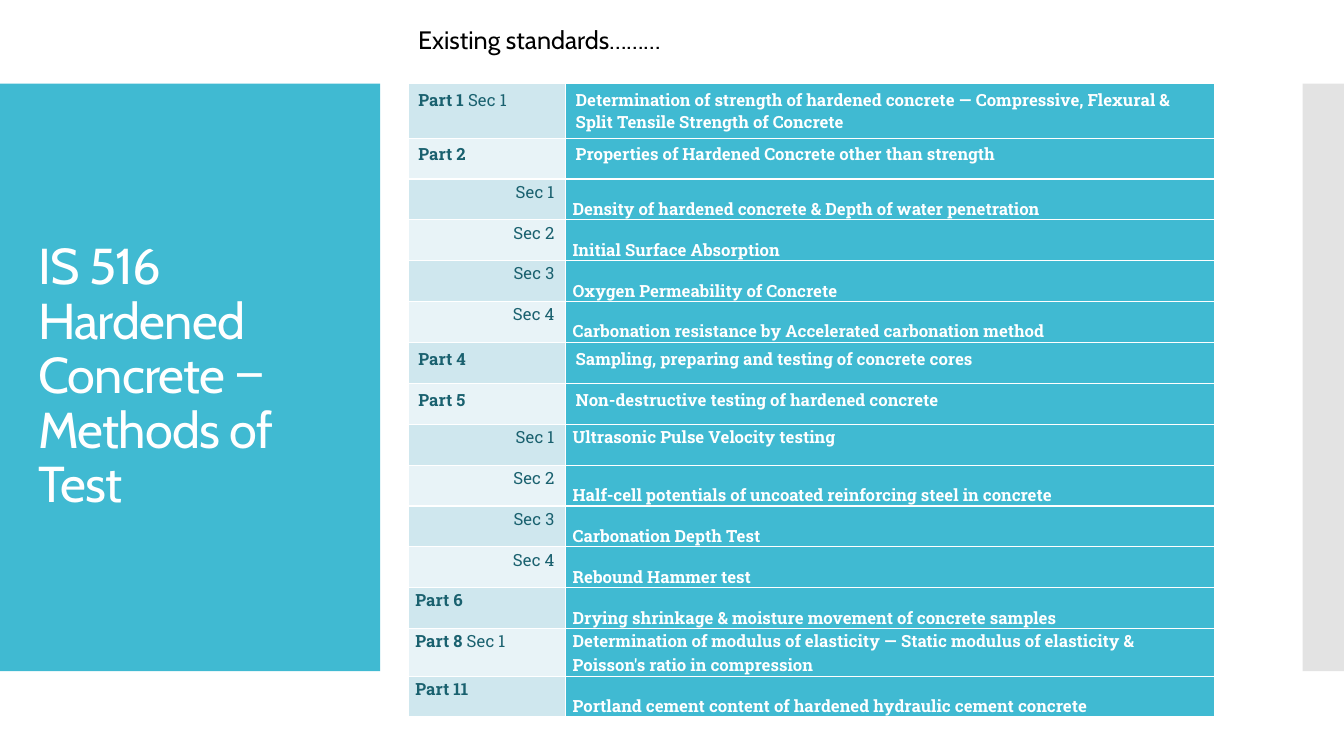
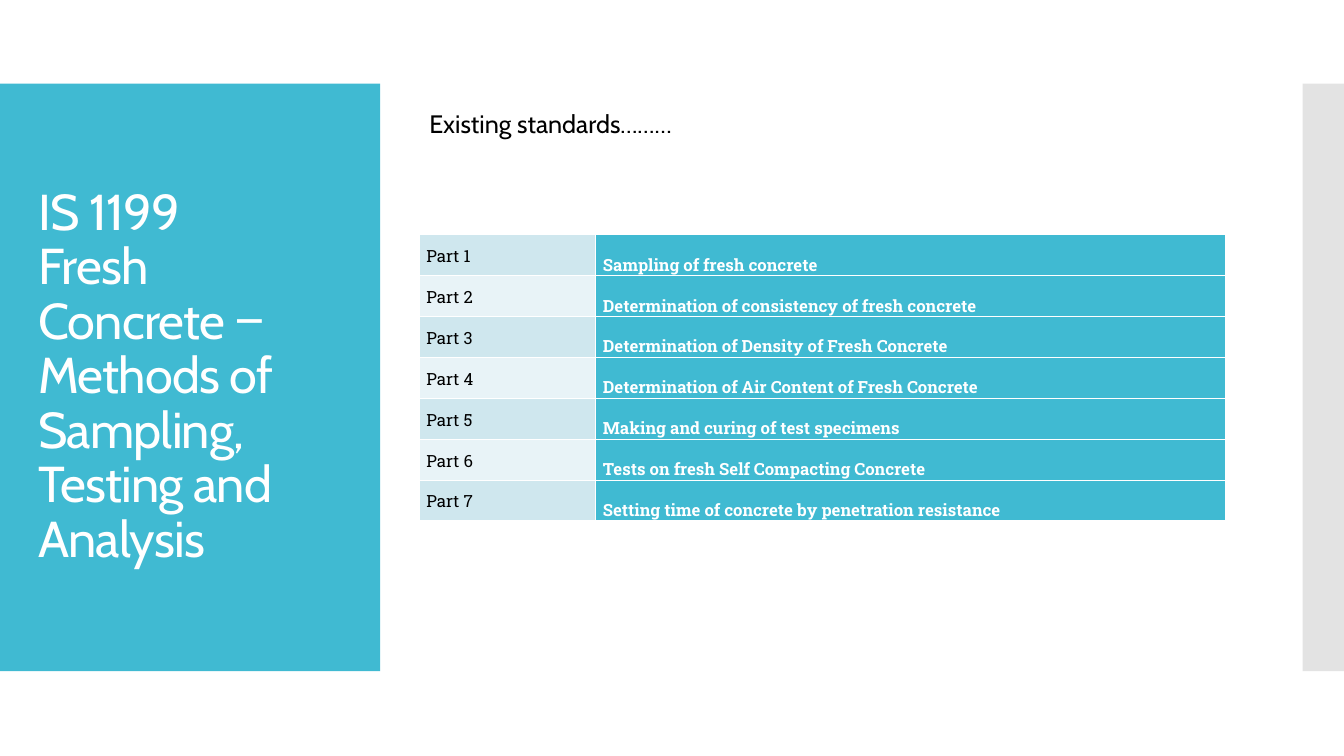
from dataclasses import dataclass

from lxml import etree
from pptx import Presentation
from pptx.dml.color import RGBColor
from pptx.enum.shapes import MSO_SHAPE
from pptx.enum.text import MSO_ANCHOR, MSO_AUTO_SIZE, PP_ALIGN
from pptx.oxml.ns import qn
from pptx.slide import Slide, SlideLayout
from pptx.table import _Cell
from pptx.text.text import _Run
from pptx.util import Inches, Pt


@dataclass(frozen=True)
class Theme:
    heading_font: str = "Cabin"
    body_font: str = "Roboto Slab"
    title_size: int = 36
    caption_size: int = 18
    table_size: int = 12
    teal: str = "40BAD2"
    dark_teal: str = "1A616F"
    label_fills: tuple[str, str] = ("CFE7EE", "E8F3F7")
    grey: str = "C8C8C8"
    white: str = "FFFFFF"
    black: str = "000000"


THEME = Theme()
TABLE_WIDTH = 8
ROW_HEIGHT = 2.84 / 7


@dataclass(frozen=True)
class Band:
    left: float
    width: float
    color: str
    opacity: int = 100


@dataclass(frozen=True)
class Standard:
    """A table row; the heading is bold, the section regular, roomy keeps default margins."""
    heading: str
    section: str
    description: str
    roomy: bool = False
    anchor: MSO_ANCHOR = MSO_ANCHOR.BOTTOM


@dataclass(frozen=True)
class StandardsPage:
    title: str
    left: float
    caption_top: float
    table_top: float
    label_width: float
    label_color: str
    label_anchor: MSO_ANCHOR
    section_align: PP_ALIGN
    standards: tuple[Standard, ...]


BANDS = (
    Band(0, 3.77, THEME.teal),
    Band(12.92, 0.42, THEME.grey, opacity=50),
)

HARDENED = StandardsPage(
    "IS 516 Hardened Concrete ‒ Methods of Test",
    left=4.05, caption_top=0.19, table_top=0.83, label_width=1.56,
    label_color=THEME.dark_teal, label_anchor=MSO_ANCHOR.TOP,
    section_align=PP_ALIGN.RIGHT,
    standards=(
        Standard("Part 1 ", "Sec 1", "Determination of strength of hardened concrete ― "
                 "Compressive, Flexural & Split Tensile Strength of Concrete", roomy=True),
        Standard("Part 2", "", "Properties of Hardened Concrete other than strength", roomy=True),
        Standard("", "Sec 1 ", "Density of hardened concrete & Depth of water penetration"),
        Standard("", "Sec 2 ", "Initial Surface Absorption"),
        Standard("", "Sec 3 ", "Oxygen Permeability of Concrete"),
        Standard("", "Sec 4 ", "Carbonation resistance by Accelerated carbonation method"),
        Standard("Part 4", "", "Sampling, preparing and testing of concrete cores", roomy=True),
        Standard("Part 5", "", "Non-destructive testing of hardened concrete", roomy=True),
        Standard("", "Sec 1 ", "Ultrasonic Pulse Velocity testing", anchor=MSO_ANCHOR.TOP),
        Standard("", "Sec 2 ", "Half-cell potentials of uncoated reinforcing steel in concrete"),
        Standard("", "Sec 3 ", "Carbonation Depth Test"),
        Standard("", "Sec 4 ", "Rebound Hammer test"),
        Standard("Part 6", "", "Drying shrinkage & moisture movement of concrete samples"),
        Standard("Part 8 ", "Sec 1", "Determination of modulus of elasticity ― "
                 "Static modulus of elasticity & Poisson's ratio in compression"),
        Standard("Part 11", "", "Portland cement content of hardened hydraulic cement concrete"),
    ),
)

FRESH_TOPICS = (
    "Sampling of fresh concrete",
    "Determination of consistency of fresh concrete",
    "Determination of Density of Fresh Concrete",
    "Determination of Air Content of Fresh Concrete",
    "Making and curing of test specimens",
    "Tests on fresh Self Compacting Concrete",
    "Setting time of concrete by penetration resistance",
)

FRESH = StandardsPage(
    "IS 1199\vFresh Concrete ‒ Methods of Sampling, Testing and Analysis",
    left=4.16, caption_top=1.03, table_top=2.33, label_width=1.75,
    label_color=THEME.black, label_anchor=MSO_ANCHOR.MIDDLE,
    section_align=PP_ALIGN.LEFT,
    standards=tuple(Standard("", f"Part {number}", topic)
                    for number, topic in enumerate(FRESH_TOPICS, start=1)),
)


def style_run(r: _Run, font: str, size: int, color: str, bold: bool = False) -> None:
    r.font.name = font
    r.font.size = Pt(size)
    r.font.bold = bold
    r.font.color.rgb = RGBColor.from_string(color)


def add_bands(layout: SlideLayout, s: Slide) -> None:
    """Draw the side bands and move them to the layout, behind its placeholders."""
    for band in BANDS:
        sp = s.shapes.add_shape(MSO_SHAPE.RECTANGLE, Inches(band.left), Inches(0.83),
                                Inches(band.width), Inches(5.83))
        sp.shadow.inherit = False
        sp.line.fill.background()
        sp.fill.solid()
        sp.fill.fore_color.rgb = RGBColor.from_string(band.color)
        if band.opacity < 100:
            color = sp.element.spPr.find(f".//{qn('a:srgbClr')}")
            etree.SubElement(color, qn("a:alpha")).set("val", str(band.opacity * 1000))
        layout.shapes.element.insert(2, sp.element)


def set_title(s: Slide, text: str) -> None:
    title = s.shapes.title
    title.left, title.top = Inches(0.28), Inches(1.23)
    title.width, title.height = Inches(3.22), Inches(5.03)
    tf = title.text_frame
    tf.text = text
    tf.word_wrap = True
    tf.auto_size = MSO_AUTO_SIZE.NONE
    tf.vertical_anchor = MSO_ANCHOR.MIDDLE
    p = tf.paragraphs[0]
    p.alignment = PP_ALIGN.LEFT
    p.line_spacing = 0.9
    for r in p.runs:
        style_run(r, THEME.heading_font, THEME.title_size, THEME.white)
        r._r.get_or_add_rPr().set("spc", "-60")


def add_caption(s: Slide, page: StandardsPage) -> None:
    box = s.shapes.add_textbox(Inches(page.left), Inches(page.caption_top),
                               Inches(TABLE_WIDTH), Inches(0.4))
    tf = box.text_frame
    tf.word_wrap = True
    tf.auto_size = MSO_AUTO_SIZE.SHAPE_TO_FIT_TEXT
    tf.text = "Existing standards………"
    style_run(tf.paragraphs[0].runs[0], THEME.heading_font, THEME.caption_size, THEME.black)


def add_borders(cell: _Cell) -> None:
    tc_pr = cell._tc.get_or_add_tcPr()
    for i, side in enumerate(("lnL", "lnR", "lnT", "lnB")):
        ln = etree.Element(qn(f"a:{side}"), w=str(Pt(1)))
        fill = etree.SubElement(ln, qn("a:solidFill"))
        etree.SubElement(fill, qn("a:srgbClr"), val=THEME.white)
        tc_pr.insert(i, ln)


def fill_cell(cell: _Cell, texts: tuple[tuple[str, bool], ...], color: str, fill: str,
              anchor: MSO_ANCHOR, roomy: bool, align: PP_ALIGN = PP_ALIGN.LEFT) -> None:
    """Write (text, bold) pairs as runs of one paragraph and style the cell."""
    cell.fill.solid()
    cell.fill.fore_color.rgb = RGBColor.from_string(fill)
    add_borders(cell)
    p = cell.text_frame.paragraphs[0]
    p.alignment = align
    if roomy:
        cell.vertical_anchor = MSO_ANCHOR.TOP
    else:
        cell.vertical_anchor = anchor
        cell.margin_left = cell.margin_right = Inches(0.07)
        cell.margin_top = cell.margin_bottom = 0
        p.line_spacing = 1.07
    for text, bold in texts:
        if text:
            r = p.add_run()
            r.text = text
            style_run(r, THEME.body_font, THEME.table_size, color, bold)


def add_standards_table(s: Slide, page: StandardsPage) -> None:
    count = len(page.standards)
    table = s.shapes.add_table(count, 2, Inches(page.left), Inches(page.table_top),
                               Inches(TABLE_WIDTH), Inches(ROW_HEIGHT * count)).table
    table.first_row = table.horz_banding = False
    table.columns[0].width = Inches(page.label_width)
    table.columns[1].width = Inches(TABLE_WIDTH - page.label_width)
    for i, standard in enumerate(page.standards):
        align = PP_ALIGN.LEFT if standard.heading else page.section_align
        fill_cell(table.cell(i, 0), ((standard.heading, True), (standard.section, False)),
                  page.label_color, THEME.label_fills[i % 2], page.label_anchor,
                  standard.roomy, align)
        fill_cell(table.cell(i, 1), ((standard.description, True),),
                  THEME.white, THEME.teal, standard.anchor, standard.roomy)


def main() -> None:
    prs = Presentation()
    prs.slide_width, prs.slide_height = Inches(13.33), Inches(7.5)
    layout = prs.slide_layouts.get_by_name("Title Only")
    for page in (HARDENED, FRESH):
        s = prs.slides.add_slide(layout)
        set_title(s, page.title)
        add_standards_table(s, page)
        add_caption(s, page)
    add_bands(layout, prs.slides[0])
    prs.save("out.pptx")


if __name__ == "__main__":
    main()
